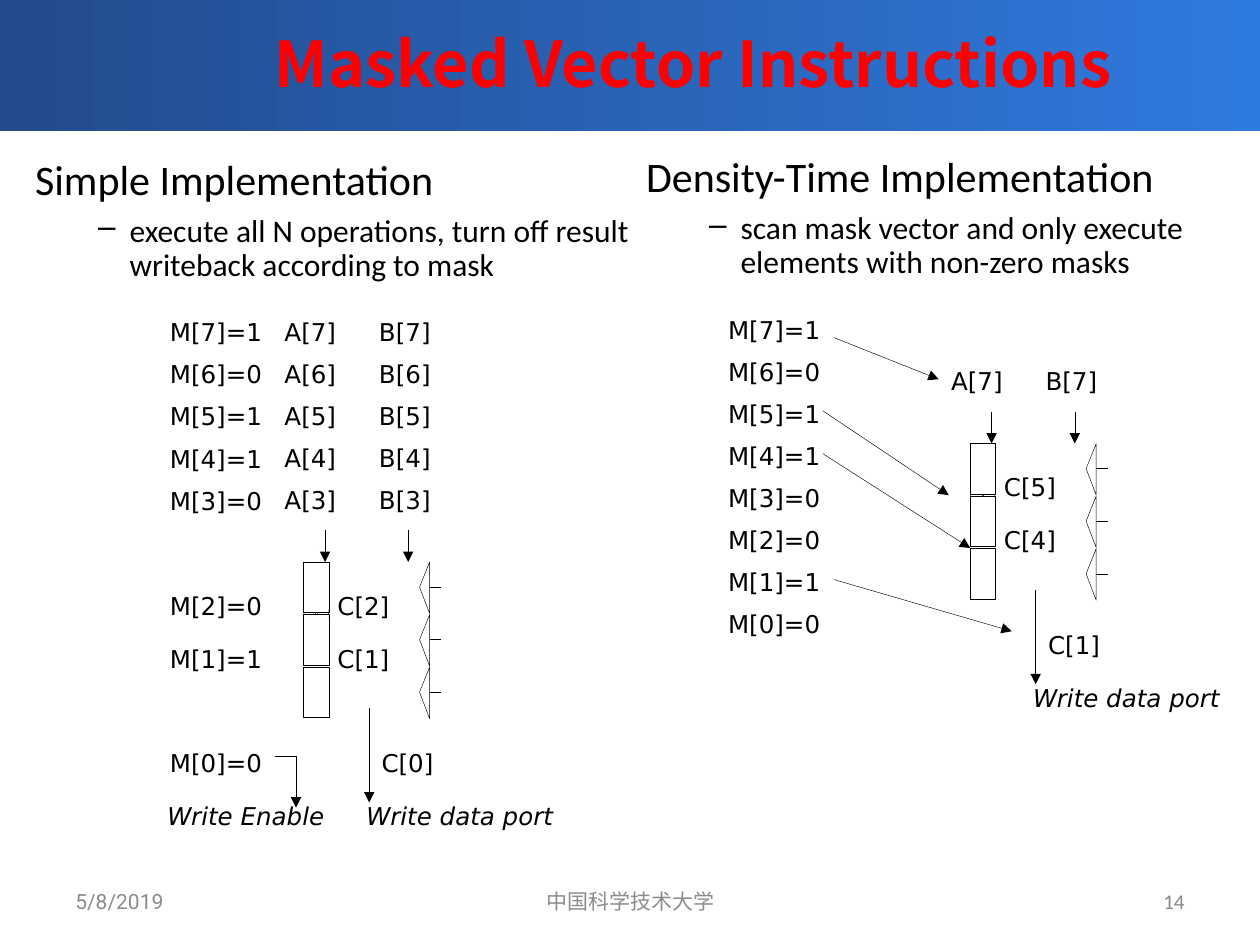
from lxml.etree import SubElement
from pptx import Presentation
from pptx.dml.color import RGBColor
from pptx.enum.shapes import MSO_CONNECTOR, MSO_SHAPE
from pptx.enum.text import MSO_ANCHOR, MSO_AUTO_SIZE, PP_ALIGN
from pptx.oxml.ns import qn
from pptx.util import Inches, Pt

BLACK, WHITE, RED, GREY = "000000", "FFFFFF", "FF0000", "8C8C8C"
LABEL_FONT = "DejaVu Sans"
LABEL_H, ROW, HAIR = 0.33, 0.334, 0.25
MASK_W, ITEM_W, PORT_W, ENABLE_W = 0.95, 0.64, 1.69, 1.46
STAGES, STAGE_STEP, STAGE_W, STAGE_H = 3, 0.417, 0.2, 0.4

TITLE = "Masked Vector Instructions"
FOOTERS = [
    ("5/8/2019", 0.5, 2.33, PP_ALIGN.LEFT, "Roboto", GREY),
    ("中国科学技术大学", 3.42, 3.17, PP_ALIGN.CENTER, "Roboto", GREY),
    ("14", 7.17, 2.33, PP_ALIGN.RIGHT, "Calibri", "898989"),
]
BODIES = [
    ("Simple Implementation",
     "execute all N operations, turn off result writeback according to mask",
     (0.18, 1.2, 5.42, 1.11)),
    ("Density-Time Implementation",
     "scan mask vector and only execute elements with non-zero masks",
     (5.03, 1.18, 5.17, 1.11)),
]
MASK = {7: 1, 6: 0, 5: 1, 4: 1, 3: 0, 2: 0, 1: 1, 0: 0}
SIMPLE = dict(origin=(2.41, 4.46), results=(2, 1, 0), operands=(7, 6, 5, 4, 3),
              mask_x=1.25, mask_ys=[2.47 + ROW * i for i in range(5)] + [4.64, 5.06, 5.89])
DENSITY = dict(origin=(7.7, 3.52), results=(5, 4, 1), operands=(7,),
               mask_x=5.68, mask_ys=[2.45 + ROW * i for i in range(8)])
RESULT_OFFSETS = [(0.17, 0.18), (0.17, 0.6), (0.52, 1.43)]
FUNNEL = [(0, 0), (0.05, 0.4), (0.16, 0.4), (0.2, 0), (0.12, 0), (0.1, 0.05), (0.09, 0)]
CLOCK = [(1, 0), (0.92, 0.2), (1, 0.41)]
SELECTIONS = [(6.62, 4.6, 8.03, 5.01), (6.53, 3.6, 7.7, 4.35),
              (6.53, 3.26, 7.53, 3.93), (6.62, 2.68, 7.45, 3.01)]
ENABLE_ELBOW = [(0, 0), (0.17, 0), (0.17, 0.41)]


def rgb(color):
    return RGBColor.from_string(color)


def style_runs(p, size, font, color, bold=False, italic=False):
    for r in p.runs:
        r.font.size, r.font.name = Pt(size), font
        r.font.bold, r.font.italic = bold, italic
        r.font.color.rgb = rgb(color)
        SubElement(r._r.get_or_add_rPr(), qn("a:ea")).set("typeface", font)


def add_box(s, x, y, w, h, wrap=True):
    tf = s.shapes.add_textbox(*map(Inches, (x, y, w, h))).text_frame
    tf.word_wrap = wrap
    tf.vertical_anchor = MSO_ANCHOR.MIDDLE
    return tf


def add_line_of_text(s, text, box, size, font, color, align, bold=False):
    p = add_box(s, *box).paragraphs[0]
    p.text, p.alignment = text, align
    style_runs(p, size, font, color, bold)


def add_label(s, text, x, y, w, italic=False):
    tf = add_box(s, x, y, w, LABEL_H, wrap=False)
    tf.auto_size = MSO_AUTO_SIZE.SHAPE_TO_FIT_TEXT
    tf.text = text
    style_runs(tf.paragraphs[0], 14, LABEL_FONT, BLACK, italic=italic)


def add_body(s, heading, detail, box):
    tf = add_box(s, *box)
    tf.text = heading
    p = tf.add_paragraph()
    p.text, p.level, p.space_before = detail, 1, Pt(6)
    for p, size, margin, indent in zip(tf.paragraphs, (24, 18), (0.31, 0.75), (-0.31, -0.25)):
        p.line_spacing = 0.9
        pPr = p._p.get_or_add_pPr()
        pPr.set("marL", str(Inches(margin)))
        pPr.set("indent", str(Inches(indent)))
        if p.level:
            SubElement(pPr, qn("a:buChar")).set("char", "–")
        else:
            SubElement(pPr, qn("a:buNone"))
        style_runs(p, size, "Calibri", BLACK)


def set_outline(sp, arrow=False):
    sp.line.color.rgb, sp.line.width = rgb(BLACK), Pt(HAIR)
    if arrow:
        SubElement(sp.line._get_or_add_ln(), qn("a:tailEnd")).set("type", "triangle")


def set_fill(sp, color):
    sp.shadow.inherit = False
    if color:
        sp.fill.solid()
        sp.fill.fore_color.rgb = rgb(color)
    else:
        sp.fill.background()


def add_line(s, x1, y1, x2, y2, arrow=True):
    line = s.shapes.add_connector(MSO_CONNECTOR.STRAIGHT, *map(Inches, (x1, y1, x2, y2)))
    set_outline(line, arrow)
    SubElement(line._element.spPr, qn("a:effectLst"))


def add_outline(s, x, y, points, fill=None, close=True, arrow=False):
    places = [(Inches(x + dx), Inches(y + dy)) for dx, dy in points]
    builder = s.shapes.build_freeform(*places[0])
    builder.add_line_segments(places[1:], close=close)
    sp = builder.convert_to_shape()
    set_fill(sp, fill)
    set_outline(sp, arrow)


def add_pipeline(s, x, y, results):
    add_outline(s, x, y + 0.38, FUNNEL)
    for i in range(STAGES):
        top = y + i * STAGE_STEP
        sp = s.shapes.add_shape(MSO_SHAPE.RECTANGLE,
                                *map(Inches, (x, top, STAGE_W, STAGE_H)))
        set_fill(sp, WHITE)
        set_outline(sp)
        add_outline(s, x, top, CLOCK, WHITE)
        add_line(s, x + 1, top + 0.2, x + 1.09, top + 0.2, arrow=False)
    for n, (dx, dy) in zip(results, RESULT_OFFSETS):
        add_label(s, f"C[{n}]", x + dx, y + dy, ITEM_W)
    for dx in (0.17, 0.83):
        add_line(s, x + dx, y - 0.25, x + dx, y)
    add_line(s, x + 0.52, y + 1.16, x + 0.52, y + 1.91)
    add_label(s, "Write data port", x + 0.4, y + 1.85, PORT_W, italic=True)


def add_diagram(s, origin, results, operands, mask_x, mask_ys):
    x, y = origin
    add_pipeline(s, x, y, results)
    for i, n in enumerate(reversed(operands)):
        for name, dx in (("A", -0.25), ("B", 0.5)):
            add_label(s, f"{name}[{n}]", x + dx, y - 0.66 - i * ROW, ITEM_W)
    for (n, bit), top in zip(MASK.items(), mask_ys):
        add_label(s, f"M[{n}]={bit}", mask_x, top, MASK_W)


def main():
    """Build the masked vector instructions slide."""
    prs = Presentation()
    prs.slide_width, prs.slide_height = Inches(10), Inches(7.5)
    s = prs.slides.add_slide(prs.slide_layouts[6])

    banner = s.shapes.add_shape(MSO_SHAPE.RECTANGLE, 0, 0, prs.slide_width, Inches(1.04))
    banner.shadow.inherit = False
    banner.line.fill.background()
    banner.fill.gradient()
    banner.fill.gradient_angle = 0
    for stop, color, position in zip(banner.fill.gradient_stops, ("234B8D", "2F7ADF"), (0, 1)):
        stop.color.rgb, stop.position = rgb(color), position

    add_line_of_text(s, TITLE, (1, 0, 9, 0.99), 36, "Noto Sans CJK SC", RED,
                     PP_ALIGN.CENTER, bold=True)
    for text, x, w, align, font, color in FOOTERS:
        add_line_of_text(s, text, (x, 6.95, w, 0.4), 12, font, color, align)
    for body in BODIES:
        add_body(s, *body)
    for diagram in (SIMPLE, DENSITY):
        add_diagram(s, **diagram)
    for ends in SELECTIONS:
        add_line(s, *ends)
    add_outline(s, 2.18, 6, ENABLE_ELBOW, close=False, arrow=True)
    add_label(s, "Write Enable", 1.23, 6.31, ENABLE_W, italic=True)
    prs.save("out.pptx")


if __name__ == "__main__":
    main()
